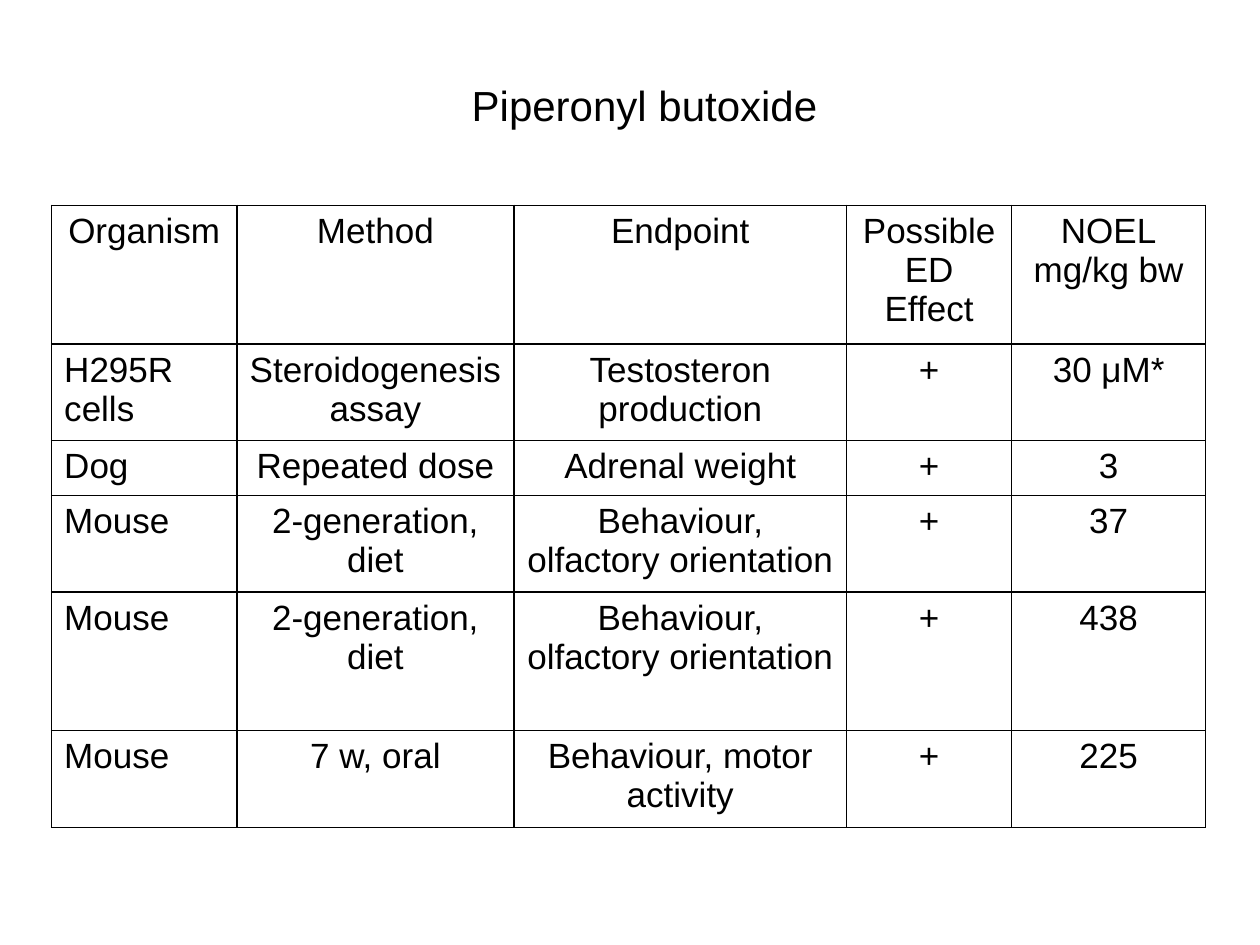
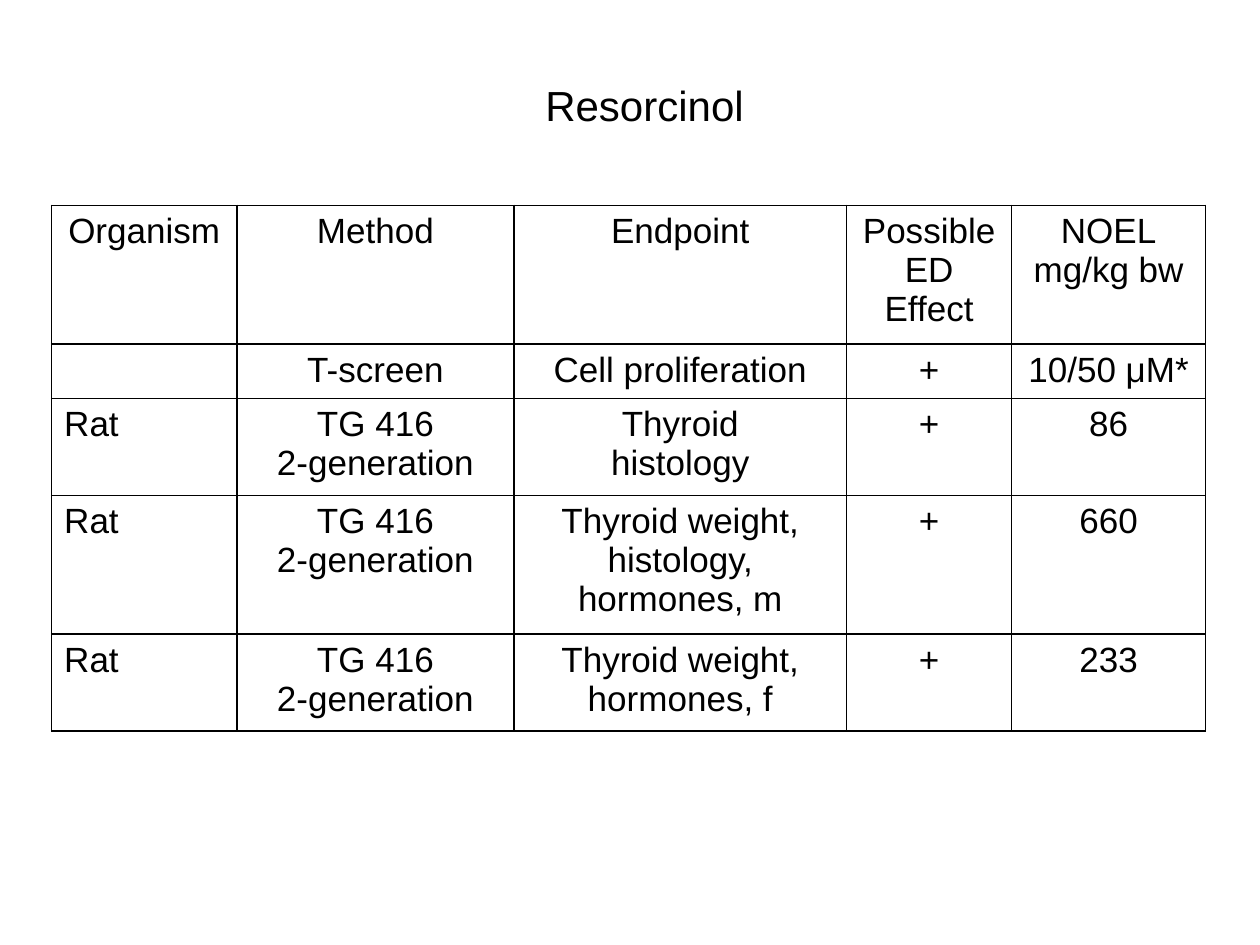
from pptx import Presentation
from pptx.dml.color import RGBColor
from pptx.enum.text import MSO_AUTO_SIZE, PP_ALIGN
from pptx.oxml.ns import qn
from pptx.util import Inches, Pt
from lxml.etree import SubElement

# Shared look
COLORS = {"ink": "000000", "line": "000000"}
FONT = {"name": "Arial", "bold": False}
TITLE = {**FONT, "size": Pt(24)}
BODY = {**FONT, "size": Pt(20)}
WIDTHS = (1.47, 2.2, 2.64, 1.31, 1.54)
LEFT, TOP = 0.41, 1.63
HEADER = ("Organism", "Method", "Endpoint", "Possible ED Effect", "NOEL\nmg/kg bw")

# Each row: its height in text lines, then its cells
BUTOXIDE = [
    (3, HEADER),
    (2, ("H295R cells", "Steroidogenesis assay", "Testosteron production", "+", "30 μM*")),
    (1, ("Dog", "Repeated dose", "Adrenal weight", "+", "3")),
    (2, ("Mouse", "2-generation, diet", "Behaviour, olfactory orientation", "+", "37")),
    (3, ("Mouse", "2-generation, diet", "Behaviour, olfactory orientation", "+", "438")),
    (2, ("Mouse", "7 w, oral", "Behaviour, motor activity", "+", "225")),
]
RAT_TEST = "TG 416\n2-generation"
RESORCINOL = [
    (3, HEADER),
    (1, ("", "T-screen", "Cell proliferation", "+", "10/50 μM*")),
    (2, ("Rat", RAT_TEST, "Thyroid\nhistology", "+", "86")),
    (3, ("Rat", RAT_TEST, "Thyroid weight, histology, hormones, m", "+", "660")),
    (2, ("Rat", RAT_TEST, "Thyroid weight, hormones, f", "+", "233")),
]


def write(frame, text, style, align):
    frame.text = text
    for para in frame.paragraphs:
        para.alignment = align
        for run in para.runs:
            for key, value in style.items():
                setattr(run.font, key, value)
            run.font.color.rgb = RGBColor.from_string(COLORS["ink"])


def add_title(slide, text):
    box = slide.shapes.add_textbox(Inches(0.66), Inches(0.58), Inches(8.91), Inches(0.5))
    frame = box.text_frame
    frame.word_wrap = True
    frame.auto_size = MSO_AUTO_SIZE.SHAPE_TO_FIT_TEXT
    write(frame, text, TITLE, PP_ALIGN.CENTER)


def add_border(cell):
    props = cell._tc.get_or_add_tcPr()
    for side in ("lnL", "lnR", "lnT", "lnB"):
        line = SubElement(props, qn(f"a:{side}"), w=str(Pt(1)))
        fill = SubElement(line, qn("a:solidFill"))
        SubElement(fill, qn("a:srgbClr"), val=COLORS["line"])


def add_grid(slide, rows):
    heights = [0.1 + lines / 3 for lines, _ in rows]
    frame = slide.shapes.add_table(len(rows), len(WIDTHS), Inches(LEFT), Inches(TOP),
                                   Inches(sum(WIDTHS)), Inches(sum(heights)))
    table = frame.table
    table.first_row = table.horz_banding = False
    for col, width in zip(table.columns, WIDTHS):
        col.width = Inches(width)
    for r, (_, texts) in enumerate(rows):
        table.rows[r].height = Inches(heights[r])
        for c, text in enumerate(texts):
            cell = table.cell(r, c)
            # Organism names sit left; headings and all else are centred
            align = PP_ALIGN.LEFT if r and c == 0 else PP_ALIGN.CENTER
            write(cell.text_frame, text, BODY, align)
            add_border(cell)
            cell.fill.background()


def main():
    deck = Presentation()
    deck.slide_width, deck.slide_height = Inches(10), Inches(7.5)
    for title, rows in (("Piperonyl butoxide", BUTOXIDE), ("Resorcinol", RESORCINOL)):
        slide = deck.slides.add_slide(deck.slide_layouts[6])
        add_title(slide, title)
        add_grid(slide, rows)
    deck.save("out.pptx")


if __name__ == "__main__":
    main()
